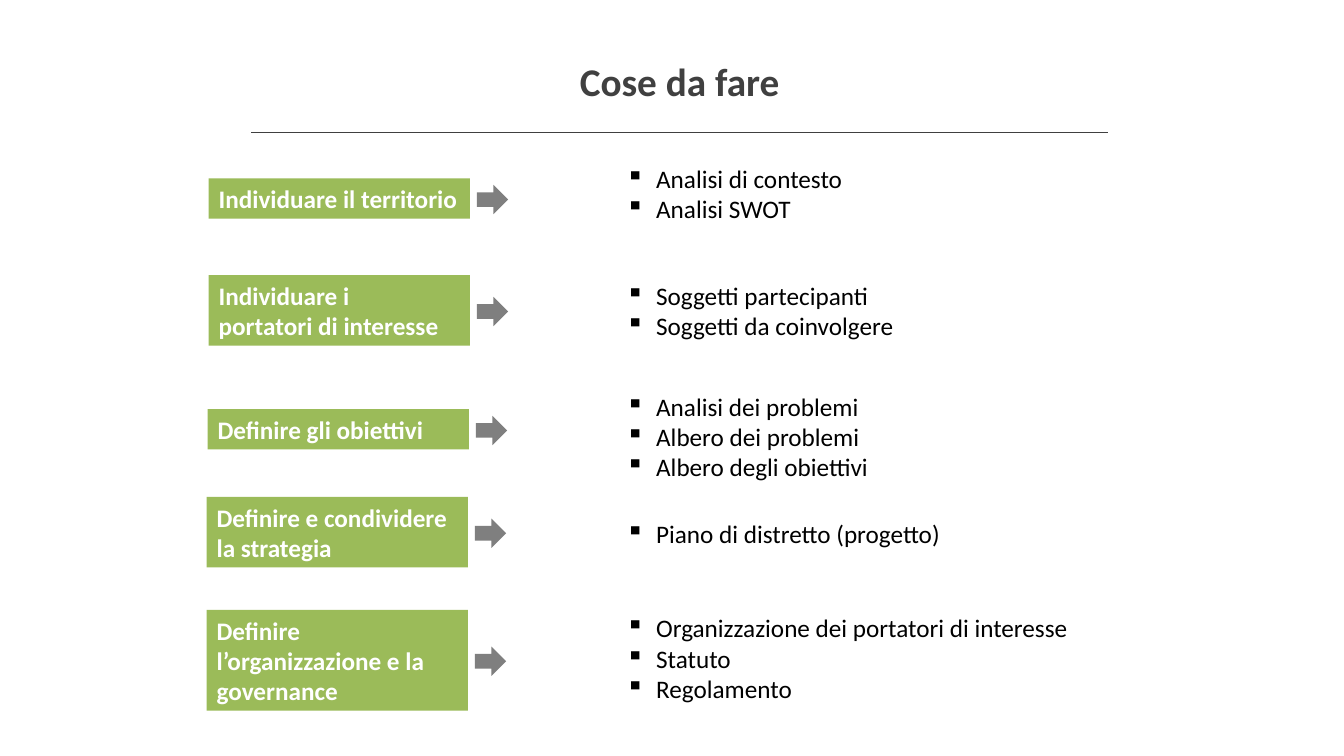
from pptx import Presentation
from pptx.dml.color import RGBColor
from pptx.enum.shapes import MSO_CONNECTOR, MSO_SHAPE
from pptx.enum.text import MSO_ANCHOR, MSO_AUTO_SIZE, PP_ALIGN
from pptx.oxml.xmlchemy import OxmlElement
from pptx.util import Inches, Pt


def color(hex_string):
    return RGBColor.from_string(hex_string)


class SlideBuilder:
    FONT = "Calibri"
    GREEN, GRAY, DARK = "9BBB59", "7F7F7F", "404040"
    BLACK, WHITE = "000000", "FFFFFF"

    def __init__(self, slide):
        self.slide = slide

    def fill_text(self, frame, lines, size, ink, bold=False,
                  align=PP_ALIGN.LEFT, **frame_format):
        frame_format = {"word_wrap": True, **frame_format}
        for name, value in frame_format.items():
            setattr(frame, name, value)
        for index, line in enumerate(lines):
            paragraph = frame.paragraphs[0] if index == 0 else frame.add_paragraph()
            paragraph.alignment = align
            run = paragraph.add_run()
            run.text = line
            font_format = {"name": self.FONT, "size": Pt(size), "bold": bold}
            for name, value in font_format.items():
                setattr(run.font, name, value)
            run.font.color.rgb = color(ink)
        return frame.paragraphs

    def text(self, left, top, width, height, lines, **style):
        box = self.slide.shapes.add_textbox(
            Inches(left), Inches(top), Inches(width), Inches(height))
        return self.fill_text(box.text_frame, lines, **style)

    def bullets(self, left, top, width, height, lines, spacing=0):
        paragraphs = self.text(left, top, width, height, lines, size=18,
                               ink=self.BLACK, align=PP_ALIGN.JUSTIFY,
                               auto_size=MSO_AUTO_SIZE.SHAPE_TO_FIT_TEXT)
        for paragraph in paragraphs:
            paragraph.space_before = paragraph.space_after = Pt(spacing)
            properties = paragraph._p.get_or_add_pPr()
            properties.set("marL", str(Inches(0.3)))
            properties.set("indent", str(Inches(-0.3)))
            bullet = OxmlElement("a:buChar")
            bullet.set("char", "▪")
            properties.append(bullet)

    def shape(self, preset, left, top, width, height, fill):
        shape = self.slide.shapes.add_shape(
            preset, Inches(left), Inches(top), Inches(width), Inches(height))
        shape.shadow.inherit = False
        shape.fill.solid()
        shape.fill.fore_color.rgb = color(fill)
        shape.line.fill.background()
        return shape

    def step(self, left, top, width, height, lines):
        box = self.shape(MSO_SHAPE.RECTANGLE, left, top, width, height, self.GREEN)
        self.fill_text(box.text_frame, lines, size=18, ink=self.WHITE, bold=True,
                       vertical_anchor=MSO_ANCHOR.MIDDLE,
                       auto_size=MSO_AUTO_SIZE.SHAPE_TO_FIT_TEXT)

    def arrow(self, left, middle, width=0.31, height=0.29):
        self.shape(MSO_SHAPE.RIGHT_ARROW, left, middle - height / 2,
                   width, height, self.GRAY)

    def rule(self, left, right, y):
        rule = self.slide.shapes.add_connector(
            MSO_CONNECTOR.STRAIGHT, Inches(left), Inches(y), Inches(right), Inches(y))
        rule.line.color.rgb = color(self.DARK)
        rule.line.width = Pt(0.75)
        rule._element.spPr.append(OxmlElement("a:effectLst"))


# Each step: left, top, rows of text, step lines, activities top, activities, spacing
STEPS = [
    (2.07, 1.77, 1, ["Individuare il territorio"],
     1.57, ["Analisi di contesto", "Analisi SWOT"], 0),
    (2.07, 2.73, 2, ["Individuare i", "portatori di interesse"],
     2.73, ["Soggetti partecipanti", "Soggetti da coinvolgere"], 0),
    (2.06, 4.06, 1, ["Definire gli obiettivi"],
     3.83, ["Analisi dei problemi", "Albero dei problemi",
            "Albero degli obiettivi"], 0),
    (2.05, 4.93, 2, ["Definire e condividere", "la strategia"],
     5.09, ["Piano di distretto (progetto)"], 6),
    (2.05, 6.05, 3, ["Definire l’organizzazione e la governance"],
     6.03, ["Organizzazione dei portatori di interesse", "Statuto",
            "Regolamento"], 0),
]
STEP_WIDTH, ARROW_GAP = 2.59, 0.07


def text_height(rows):
    return 0.1 + 0.3 * rows


def main():
    presentation = Presentation()
    presentation.slide_width = Inches(13.33)
    presentation.slide_height = Inches(7.5)
    builder = SlideBuilder(
        presentation.slides.add_slide(presentation.slide_layouts[6]))

    # Heading with its rule
    builder.text(2.49, 0.52, 8.5, 0.78, ["Cose da fare"], size=28,
                 ink=builder.DARK, bold=True, align=PP_ALIGN.CENTER)
    builder.rule(2.49, 10.99, 1.31)

    # Steps, arrows and activities
    for left, top, rows, step, activities_top, activities, spacing in STEPS:
        height = text_height(rows)
        builder.step(left, top, STEP_WIDTH, height, step)
        builder.arrow(left + STEP_WIDTH + ARROW_GAP, top + height / 2 + 0.01)
        builder.bullets(6.11, activities_top, 5.04,
                        text_height(len(activities)), activities, spacing)

    presentation.save("out.pptx")


if __name__ == "__main__":
    main()
